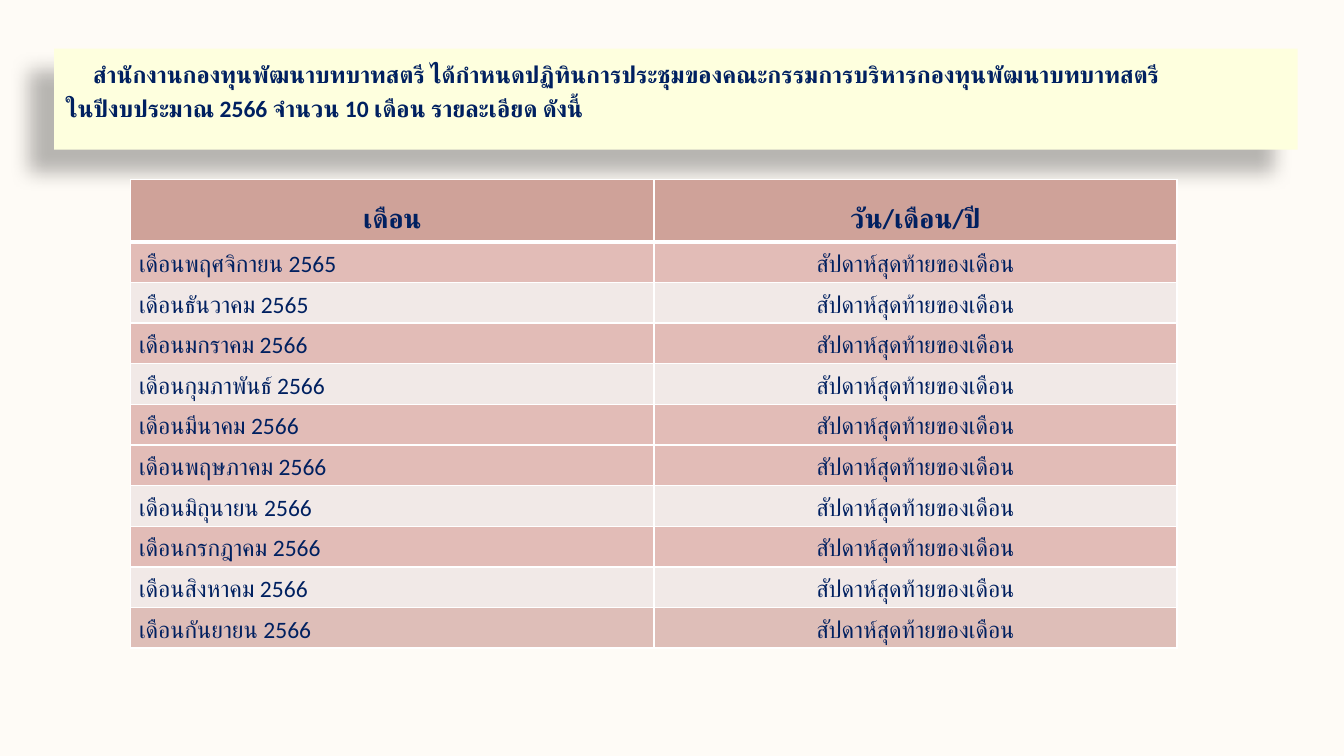
import pptx
import pptx.dml.color
import pptx.enum.text
import pptx.oxml
import pptx.oxml.ns
import pptx.util

Pt = pptx.util.Pt
ALIGN = pptx.enum.text.PP_ALIGN
ANCHOR = pptx.enum.text.MSO_ANCHOR

COLORS = {
    "background": "FEFBF6",
    "banner": "FEFFDE",
    "text": "002060",
    "header": "CFA299",
    "dark": "E2BCB7",
    "light": "F1E9E7",
    "last": "DEBEB8",
    "border": "FFFFFF",
    "shadow": "000000",
}

BANNER_TEXT = (
    "สำนักงานกองทุนพัฒนาบทบาทสตรี ได้กำหนดปฏิทินการประชุมของคณะกรรมการบริหารกองทุนพัฒนาบทบาทสตรี"
    "\vในปีงบประมาณ 2566 จำนวน 10 เดือน รายละเอียด ดังนี้"
)
HEADERS = ("เดือน", "วัน/เดือน/ปี")
MEETING_DATE = "สัปดาห์สุดท้ายของเดือน"
MONTHS = (
    ("พฤศจิกายน 2565", "dark"),
    ("ธันวาคม 2565", "light"),
    ("มกราคม 2566", "dark"),
    ("กุมภาพันธ์ 2566", "light"),
    ("มีนาคม 2566", "dark"),
    ("พฤษภาคม 2566", "dark"),
    ("มิถุนายน 2566", "light"),
    ("กรกฎาคม 2566", "dark"),
    ("สิงหาคม 2566", "light"),
    ("กันยายน 2566", "last"),
)


class SlideBuilder:
    font_name = "Calibri"

    def __init__(self, presentation):
        self.slide = presentation.slides.add_slide(presentation.slide_layouts[5])
        self.fill(self.slide.background, "background")

    def fill(self, target, color):
        target.fill.solid()
        target.fill.fore_color.rgb = pptx.dml.color.RGBColor.from_string(COLORS[color])

    def xml(self, tag, attributes, content):
        namespace = pptx.oxml.ns.nsdecls("a")
        return pptx.oxml.parse_xml(f"<a:{tag} {namespace} {attributes}>{content}</a:{tag}>")

    def format_paragraph(self, paragraph, size, bold, align, line_spacing):
        paragraph.alignment = align
        paragraph.line_spacing = line_spacing
        font = paragraph.font
        font.name, font.size, font.bold = self.font_name, Pt(size), bold
        font.color.rgb = pptx.dml.color.RGBColor.from_string(COLORS["text"])
        # Thai glyphs follow the complex-script typeface
        paragraph._p.pPr.find(pptx.oxml.ns.qn("a:defRPr")).append(
            self.xml("cs", f'typeface="{self.font_name}"', ""))

    def banner(self, text, left, top, width, height):
        """Fill and place the title, with an indented first line and a soft shadow."""
        shape = self.slide.shapes.title
        shape.left, shape.top, shape.width, shape.height = map(Pt, (left, top, width, height))
        self.fill(shape, "banner")
        shape._element.spPr.append(self.xml(
            "effectLst", "",
            f'<a:outerShdw blurRad="{Pt(11.8)}" dist="{Pt(19.7)}" dir="{141 * 60000}" '
            f'algn="ctr" rotWithShape="0"><a:srgbClr val="{COLORS["shadow"]}">'
            '<a:alpha val="28000"/></a:srgbClr></a:outerShdw>'))
        frame = shape.text_frame
        frame.text = text
        frame.word_wrap = True
        frame.auto_size = pptx.enum.text.MSO_AUTO_SIZE.SHAPE_TO_FIT_TEXT
        frame.vertical_anchor = ANCHOR.TOP
        paragraph = frame.paragraphs[0]
        self.format_paragraph(paragraph, 14, True, ALIGN.LEFT, 1.2)
        paragraph._p.pPr.set("marL", "0")
        paragraph._p.pPr.set("indent", str(Pt(16)))

    def table(self, rows, columns, left, top, width, header_height, row_height):
        height = header_height + row_height * (rows - 1)
        frame = self.slide.shapes.add_table(rows, columns, *map(Pt, (left, top, width, height)))
        table = frame.table
        table.first_row = table.horz_banding = False
        for index, row in enumerate(table.rows):
            row.height = Pt(row_height if index else header_height)
        return table

    def cell(self, cell, text, color, align, header=False, below_header=False):
        self.fill(cell, color)
        cell.text = text
        cell.vertical_anchor = ANCHOR.MIDDLE
        cell.margin_left = cell.margin_right = Pt(4.5 if header else 5)
        cell.margin_top = cell.margin_bottom = 0
        paragraph = cell.text_frame.paragraphs[0]
        self.format_paragraph(paragraph, 16 if header else 14, header, align,
                              1.5 if header else 1.15)
        if header:
            paragraph.space_after = Pt(10)
        widths = {"lnL": 1, "lnR": 1, "lnT": 3 if below_header else 1, "lnB": 3 if header else 1}
        for position, (side, width) in enumerate(widths.items()):
            cell._tc.tcPr.insert(position, self.xml(
                side, f'w="{Pt(width)}"',
                f'<a:solidFill><a:srgbClr val="{COLORS["border"]}"/></a:solidFill>'))


def main():
    presentation = pptx.Presentation()
    presentation.slide_width, presentation.slide_height = Pt(800), Pt(450)
    builder = SlideBuilder(presentation)
    builder.banner(BANNER_TEXT, 32.2, 29, 740.2, 48)
    table = builder.table(len(MONTHS) + 1, len(HEADERS), 77.8, 106.8, 622.8, 37.2, 24.2)
    for column, header in enumerate(HEADERS):
        builder.cell(table.cell(0, column), header, "header", ALIGN.CENTER, header=True)
    for row, (month, color) in enumerate(MONTHS, start=1):
        first = row == 1
        builder.cell(table.cell(row, 0), "เดือน" + month, color, ALIGN.LEFT, below_header=first)
        builder.cell(table.cell(row, 1), MEETING_DATE, color, ALIGN.CENTER, below_header=first)
    presentation.save("out.pptx")


if __name__ == "__main__":
    main()
